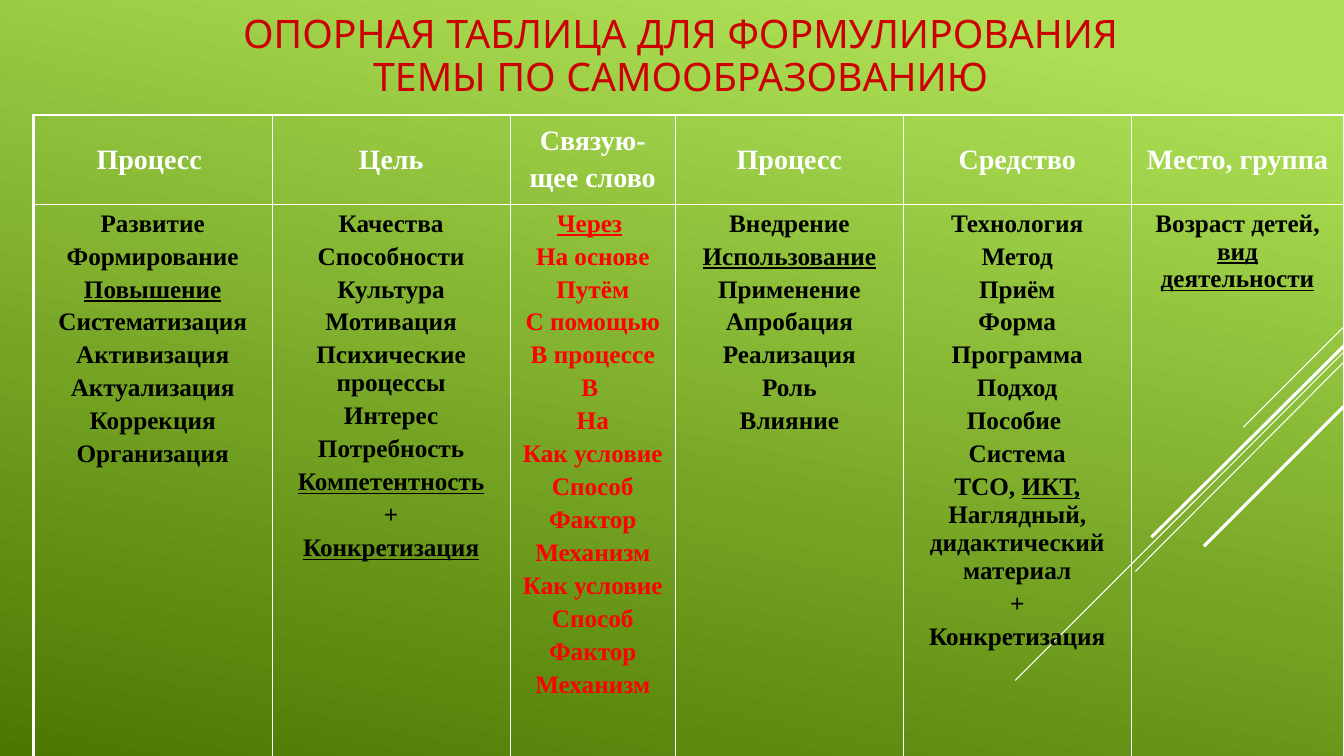
from lxml import etree
from pptx import Presentation, util as u
from pptx.dml.color import RGBColor
from pptx.enum import shapes, text
from pptx.oxml.ns import qn

WHITE = RGBColor(0xFF, 0xFF, 0xFF)
BLACK = RGBColor(0, 0, 0)
RED = RGBColor(0xFF, 0, 0)
TITLE_RED = RGBColor(0xCC, 0, 0)
LIGHT_GREEN = RGBColor(0xAC, 0xDF, 0x55)
DARK_GREEN = RGBColor(0x4C, 0x78, 0)

WIDTH, HEIGHT = 13.33, 7.5
THIN, THICK = 1, 2.25
HEADER_HEIGHT, BODY_HEIGHT = 0.89, 6.15

# Underscores enclose underlined words.
COLUMNS = [
    (2.37, BLACK, ["Процесс "],
     ["Развитие", "Формирование", "_Повышение_", "Систематизация",
      "Активизация", "Актуализация", "Коррекция", "Организация"]),
    (2.36, BLACK, ["Цель"],
     ["Качества", "Способности", "Культура", "Мотивация",
      "Психические процессы", "Интерес", "Потребность",
      "_Компетентность_", "+", "_Конкретизация_"]),
    (1.64, RED, ["Связую-", "щее слово"],
     ["_Через_ ", "На основе", "Путём", "С помощью", "В процессе", "В ", "На",
      "Как условие", "Способ", "Фактор", "Механизм",
      "Как условие", "Способ", "Фактор", "Механизм"]),
    (2.26, BLACK, ["Процесс"],
     ["Внедрение", "_Использование_", "Применение", "Апробация",
      "Реализация", "Роль", "Влияние"]),
    (2.26, BLACK, ["Средство"],
     ["Технология", "Метод", "Приём", "Форма", "Программа", "Подход",
      "Пособие ", "Система",
      "ТСО, _ИКТ, _Наглядный, дидактический материал", "+", "Конкретизация"]),
    (2.11, BLACK, ["Место, группа"],
     ["Возраст детей, _вид деятельности_"]),
]


def write_cell(cell, lines, size, color):
    frame = cell.text_frame
    for number, line in enumerate(lines):
        paragraph = frame.add_paragraph() if number else frame.paragraphs[0]
        paragraph.alignment = text.PP_ALIGN.CENTER
        paragraph.space_before = u.Pt(size * 0.2)
        for part, words in enumerate(line.split("_")):
            if words:
                run = paragraph.add_run()
                run.text = words
                run.font.name = "Times New Roman"
                run.font.size = u.Pt(size)
                run.font.bold = True
                run.font.underline = part % 2 == 1
                run.font.color.rgb = color


def draw_borders(cell, widths):
    properties = cell._tc.get_or_add_tcPr()
    for side, points in zip("LRTB", widths):
        border = etree.SubElement(properties, qn("a:ln" + side), w=str(u.Pt(points)))
        fill = etree.SubElement(border, qn("a:solidFill"))
        etree.SubElement(fill, qn("a:srgbClr"), val=str(WHITE))
    cell.fill.background()


deck = Presentation()
deck.slide_width, deck.slide_height = u.Inches(WIDTH), u.Inches(HEIGHT)
slide = deck.slides.add_slide(deck.slide_layouts[6])

backdrop = slide.background.fill
backdrop.gradient()
backdrop.gradient_angle = 360 - 102
for stop, position, color in zip(backdrop.gradient_stops, (0.1, 1),
                                 (LIGHT_GREEN, DARK_GREEN)):
    stop.position = position
    stop.color.rgb = color

for top, left, bottom, weight in [(3.24, 12.33, 4.24, 0.75), (3.49, 10.07, 6.75, 0.75),
                                  (3.59, 11.26, 5.67, 0.75), (3.43, 11.42, 5.33, THICK),
                                  (4.03, 11.94, 5.42, THICK)]:
    ray = slide.shapes.add_connector(
        shapes.MSO_CONNECTOR.STRAIGHT,
        *(u.Inches(length) for length in (WIDTH, top, left, bottom)))
    ray.line.color.rgb = WHITE
    ray.line.width = u.Pt(weight)
    etree.SubElement(ray._element.spPr, qn("a:effectLst"))

title = slide.shapes.add_textbox(u.Inches(2.03), 0, u.Inches(9.44), u.Inches(1.14))
heading = title.text_frame
heading.word_wrap = True
heading.vertical_anchor = text.MSO_ANCHOR.MIDDLE
heading.text = "ОПОРНАЯ ТАБЛИЦА ДЛЯ ФОРМУЛИРОВАНИЯ ТЕМЫ ПО САМООБРАЗОВАНИЮ"
heading.paragraphs[0].alignment = text.PP_ALIGN.CENTER
heading.paragraphs[0].line_spacing = 0.9
heading_font = heading.paragraphs[0].runs[0].font
heading_font.name = "Quicksand"
heading_font.size = u.Pt(28)
heading_font.color.rgb = TITLE_RED

topics = slide.shapes.add_table(
    2, len(COLUMNS), u.Inches(0.33), u.Inches(1.14),
    u.Inches(sum(column[0] for column in COLUMNS)),
    u.Inches(HEADER_HEIGHT + BODY_HEIGHT)).table
topics.first_row = topics.horz_banding = False
topics.rows[0].height = u.Inches(HEADER_HEIGHT)
topics.rows[1].height = u.Inches(BODY_HEIGHT)

for index, (width, color, header, terms) in enumerate(COLUMNS):
    topics.columns[index].width = u.Inches(width)
    left = THICK if index == 0 else THIN
    right = THICK if index == len(COLUMNS) - 1 else THIN
    header_cell, terms_cell = topics.cell(0, index), topics.cell(1, index)
    write_cell(header_cell, header, 20, WHITE)
    header_cell.vertical_anchor = text.MSO_ANCHOR.MIDDLE
    draw_borders(header_cell, (left, right, THICK, THIN))
    write_cell(terms_cell, terms, 18, color)
    draw_borders(terms_cell, (left, right, THIN, THICK))

deck.save("out.pptx")
